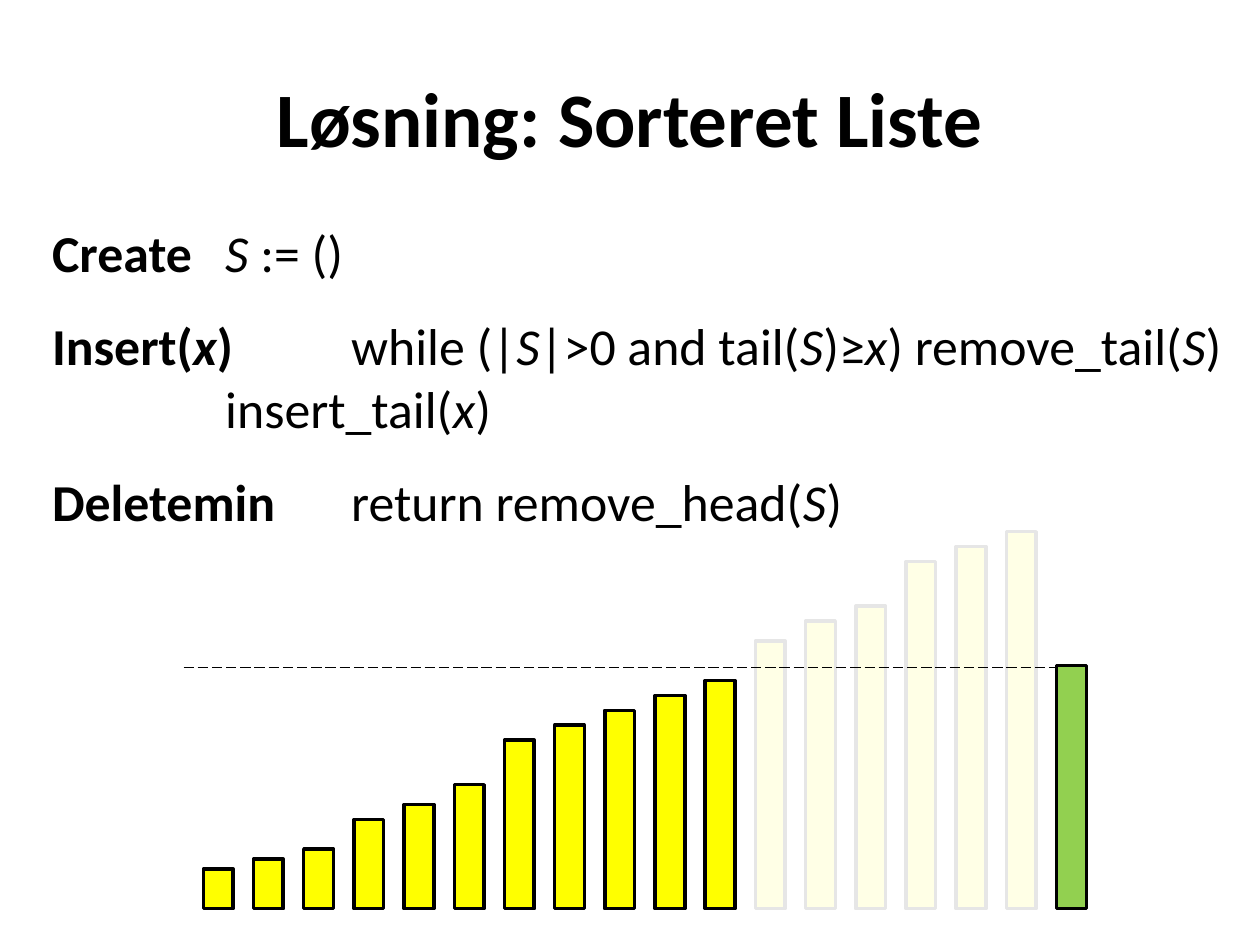
from lxml import etree
from pptx import Presentation
from pptx.dml.color import RGBColor
from pptx.enum.dml import MSO_LINE
from pptx.enum.shapes import MSO_CONNECTOR, MSO_SHAPE
from pptx.enum.text import MSO_ANCHOR, PP_ALIGN
from pptx.oxml.ns import qn
from pptx.util import Cm, Pt

RECT, STRAIGHT = MSO_SHAPE.RECTANGLE, MSO_CONNECTOR.STRAIGHT
FONT = "Calibri"
COLORS = {"ink": "000000", "kept": "FFFF00", "new": "92D050", "veil": "FFFFFF"}

TITLE = "Løsning: Sorteret Liste"
# Each line: runs as (text, style), space before, space after; b = bold, i = italic
LINES = [
    ([("Create\t", "b"), ("S", "i"), (" := ()", "")], 6, 12),
    ([("Insert(", "b"), ("x", "bi"), (")\t", "b"), ("while (|", ""), ("S", "i"),
      ("|>0 and tail(", ""), ("S", "i"), (")≥", ""), ("x", "i"),
      (") remove_tail(", ""), ("S", "i"), (")", "")], 6, 0),
    ([("\t\tinsert_tail(", ""), ("x", "i"), (")", "")], 0, 12),
    ([("Deletemin \t", "b"), ("return remove_head(", ""), ("S", "i"), (")", "")], 6, 0),
]
INDENT, TAB = Cm(0.95), Cm(2.54)
# Bar heights in cm
KEPT = [0.8, 1, 1.2, 1.8, 2.1, 2.5, 3.4, 3.7, 4, 4.3, 4.6]
REMOVED = [5.4, 5.8, 6.1, 7, 7.3, 7.6]
NEW = 4.9
FIRST_LEFT, NEW_LEFT, BAR_WIDTH, BASE = 4.1, 21.3, 0.6, 18.32


def rgb(name):
    return RGBColor.from_string(COLORS[name])


def style_run(r, size, bold=False, italic=False):
    r.font.name, r.font.size = FONT, Pt(size)
    r.font.bold, r.font.italic = bold, italic
    r.font.color.rgb = rgb("ink")


def add_rect(s, left, top, width, height, color):
    sp = s.shapes.add_shape(RECT, Cm(left), Cm(top), Cm(width), Cm(height))
    sp.shadow.inherit = False
    sp.fill.solid()
    sp.fill.fore_color.rgb = rgb(color)
    return sp


def add_title(s):
    sp = s.shapes.title
    sp.left, sp.top, sp.width, sp.height = Cm(0), Cm(0.76), Cm(25.4), Cm(3.18)
    tf = sp.text_frame
    tf.text = TITLE
    tf.vertical_anchor = MSO_ANCHOR.MIDDLE
    p = tf.paragraphs[0]
    p.alignment = PP_ALIGN.CENTER
    style_run(p.runs[0], 44, bold=True)


def add_bars(s):
    heights = KEPT + REMOVED + [NEW]
    pitch = (NEW_LEFT - FIRST_LEFT) / (len(heights) - 1)
    for i, height in enumerate(heights):
        color = "new" if i == len(heights) - 1 else "kept"
        sp = add_rect(s, FIRST_LEFT + i * pitch, BASE - height, BAR_WIDTH, height, color)
        sp.line.color.rgb = rgb("ink")
        sp.line.width = Pt(2)


def add_veil(s):
    """Fade the removed bars with an almost opaque white sheet."""
    sp = add_rect(s, 15.09, 10.52, 6, 8, "veil")
    sp.line.fill.background()
    clr = sp.fill._xPr.find(qn("a:solidFill"))[0]
    etree.SubElement(clr, qn("a:alpha"), val="90000")


def add_operations(s):
    tf = s.shapes.add_textbox(Cm(0.8), Cm(4.32), Cm(24.3), Cm(7.4)).text_frame
    tf.word_wrap = True
    for n, (runs, before, after) in enumerate(LINES):
        p = tf.add_paragraph() if n else tf.paragraphs[0]
        p.space_before, p.space_after = Pt(before), Pt(after)
        pPr = p._p.get_or_add_pPr()
        for name, length in (("marL", INDENT), ("indent", -INDENT), ("defTabSz", TAB)):
            pPr.set(name, str(int(length)))
        for text, style in runs:
            r = p.add_run()
            r.text = text
            style_run(r, 29.6, "b" in style, "i" in style)


def add_level_line(s):
    y = Cm(13.46)
    line = s.shapes.add_connector(STRAIGHT, Cm(3.7), y, Cm(NEW_LEFT), y)
    line.line.color.rgb = rgb("ink")
    line.line.width = Pt(0.75)
    line.line.dash_style = MSO_LINE.LONG_DASH
    etree.SubElement(line._element.spPr, qn("a:effectLst"))


def main():
    prs = Presentation()
    prs.slide_width, prs.slide_height = Cm(25.4), Cm(19.05)
    s = prs.slides.add_slide(prs.slide_layouts[5])
    add_title(s)
    add_bars(s)
    add_veil(s)
    add_operations(s)
    add_level_line(s)
    prs.save("out.pptx")


if __name__ == "__main__":
    main()
